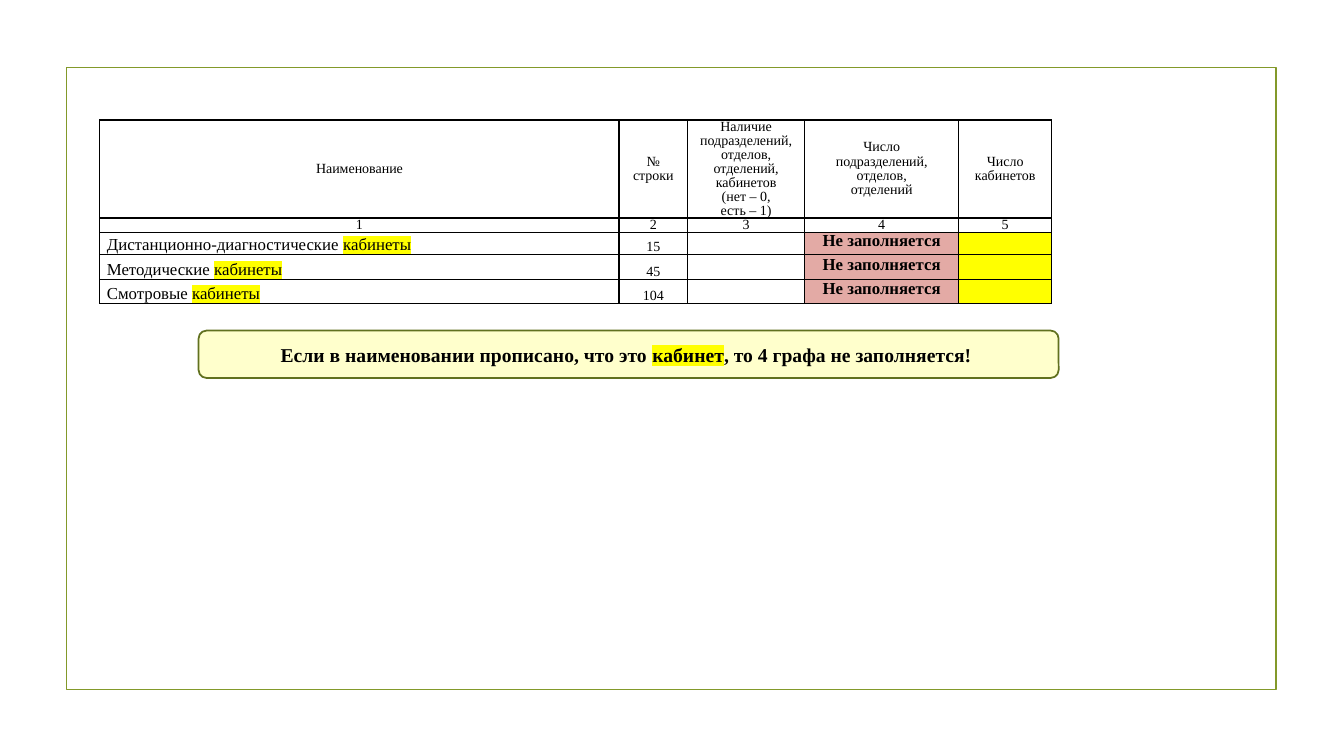
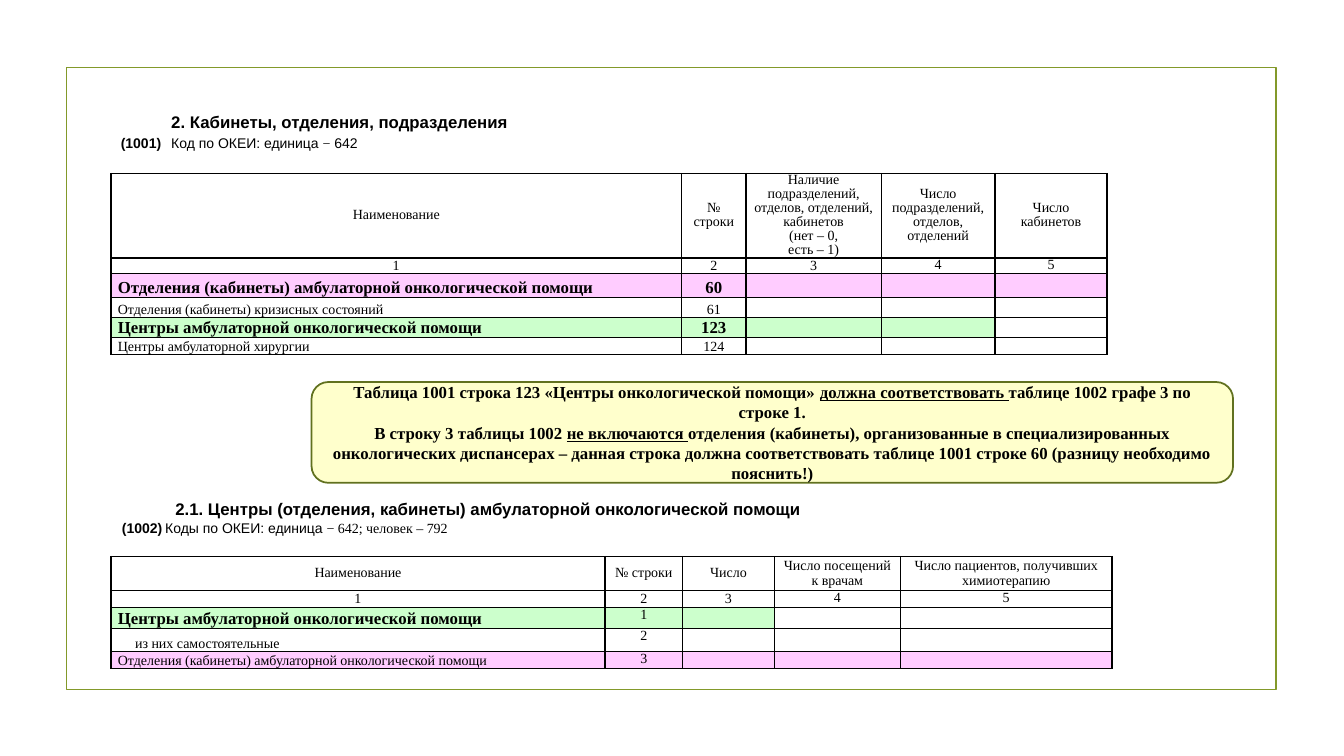
from dataclasses import dataclass

from lxml.etree import SubElement
from pptx import Presentation
from pptx.dml.color import RGBColor
from pptx.enum.shapes import MSO_SHAPE
from pptx.enum.text import MSO_ANCHOR, PP_ALIGN
from pptx.oxml.ns import qn
from pptx.util import Inches, Pt


@dataclass(frozen=True)
class Theme:
    black: str = "000000"
    frame: str = "83992A"
    callout_fill: str = "FFFFCC"
    callout_line: str = "61711F"
    yellow: str = "FFFF00"
    red: str = "E3AAA5"
    green: str = "CCFFCC"
    pink: str = "FFCCFF"
    serif: str = "Times New Roman"
    sans: str = "Arial"
    small: int = 10
    large: int = 12
    callout: int = 14
    outline: float = 1.25
    border: int = 1


THEME = Theme()
# Text styles: size and bold
PLAIN = (THEME.small, False)
LARGE = (THEME.large, False)
STRONG = (THEME.large, True)
CALLOUT = (THEME.callout, True)


def write(paragraph, text, style, align=PP_ALIGN.LEFT, face=THEME.serif, mark=None):
    """Write text whose |marked| pieces are highlighted, underlined or serif."""
    paragraph.alignment = align
    paragraph.font.name = face
    paragraph.font.size, paragraph.font.bold = Pt(style[0]), style[1]
    paragraph.font.color.rgb = RGBColor.from_string(THEME.black)
    for line_number, line in enumerate(text.split("\n")):
        if line_number:
            paragraph.add_line_break()
        for piece_number, piece in enumerate(line.split("|")):
            if not piece:
                continue
            run = paragraph.add_run()
            run.text = piece
            if piece_number % 2 == 0:
                continue
            if mark == "highlight":
                highlight = SubElement(run.font._element, qn("a:highlight"))
                SubElement(highlight, qn("a:srgbClr"), val=THEME.yellow)
            elif mark == "underline":
                run.font.underline = True
            elif mark == "serif":
                run.font.name = THEME.serif


presentation = Presentation()
presentation.slide_width, presentation.slide_height = Inches(13.33), Inches(7.5)
blank = presentation.slide_layouts[6]
offices, oncology = [presentation.slides.add_slide(blank) for _ in range(2)]

# The frame is shared through the layout
frame = offices.shapes.add_shape(
    MSO_SHAPE.RECTANGLE, Inches(0.66), Inches(0.67), Inches(12), Inches(6.17))
frame.shadow.inherit = False
frame.fill.background()
frame.line.color.rgb = RGBColor.from_string(THEME.frame)
frame.line.width = Pt(THEME.outline)
blank.shapes._spTree.append(frame._element)

# Section headings: title, its indent, code, its indent, tab position, units
headings = [
    (1.1, 1.06, 9.88, 0.56, "2. Кабинеты, отделения, подразделения", 0.5,
     "(1001)", 0, 4.64, "Код по ОКЕИ: единица |−| 642", 2),
    (1.04, 4.9, 9.92, 0.6,
     "2.1. Центры (отделения, кабинеты) амбулаторной онкологической помощи", 0.6,
     "(1002)", 0.07, 6.97, "Коды по ОКЕИ: единица |− 642; человек – 792|", 0),
]
for (left, top, width, height, title, title_indent,
     code, code_indent, tab, units, gap) in headings:
    heading = oncology.shapes.add_textbox(
        Inches(left), Inches(top), Inches(width), Inches(height)).text_frame
    heading.word_wrap = True
    title_line = heading.paragraphs[0]
    title_line._p.get_or_add_pPr().set("marL", str(Inches(title_indent)))
    write(title_line, title, STRONG, face=THEME.sans)
    code_line = heading.add_paragraph()
    properties = code_line._p.get_or_add_pPr()
    properties.set("marL", "0")
    properties.set("indent", str(Inches(code_indent)))
    tabs = SubElement(properties, qn("a:tabLst"))
    SubElement(tabs, qn("a:tab"), pos=str(Inches(tab)), algn="l")
    code_line.space_before = Pt(gap)
    write(code_line, f"{code}\t{units}", PLAIN, face=THEME.sans, mark="serif")
    code_line.runs[0].text = code
    code_line.runs[0].font.bold = True
    unit_start = code_line.add_run()
    unit_start.text = "\t" + units.split("|")[0]
    code_line.runs[0]._r.addnext(unit_start._r)

# Tables: rows hold a height, five fills and the (text, style) of leading cells
full_header = [
    "Наименование", "№\nстроки",
    "Наличие подразделений,\nотделов, отделений, кабинетов\n(нет – 0,\nесть – 1)",
    "Число\nподразделений,\nотделов,\nотделений", "Число кабинетов"]
short_header = [
    "Наименование", "№ строки", "Число", "Число посещений\nк врачам",
    "Число пациентов, получивших химиотерапию"]
centers = "Центры амбулаторной онкологической помощи"
departments = "Отделения (кабинеты) амбулаторной онкологической помощи"
no_fill = [None] * 5
all_pink = [THEME.pink] * 5
not_filled = [None, None, None, THEME.red, THEME.yellow]
TOP, MIDDLE, BOTTOM = MSO_ANCHOR.TOP, MSO_ANCHOR.MIDDLE, MSO_ANCHOR.BOTTOM

office_rows = [
    (height, not_filled, [(f"{name} |кабинеты|", LARGE), (number, PLAIN),
                          ("", PLAIN), ("Не заполняется", STRONG)])
    for height, name, number in [
        (0.22, "Дистанционно-диагностические", "15"),
        (0.25, "Методические", "45"),
        (0.24, "Смотровые", "104")]]
rows_1001 = [
    (0.24, all_pink, [(departments, STRONG), ("60", STRONG)]),
    (0.2, no_fill, [("Отделения (кабинеты) кризисных состояний", PLAIN), ("61", PLAIN)]),
    (0.2, [THEME.green] * 4 + [None], [(centers, STRONG), ("123", STRONG)]),
    (0.17, no_fill, [("Центры амбулаторной хирургии", PLAIN), ("124", PLAIN)]),
]
rows_1002 = [
    (0.21, [THEME.green] * 3 + [None] * 2, [(centers, STRONG), ("1", PLAIN)]),
    (0.23, no_fill, [("из них самостоятельные", PLAIN), ("2", PLAIN)]),
    (0.17, all_pink, [(departments, PLAIN), ("3", PLAIN)]),
]
# Exact rows: how many rows from the top have 10 pt line spacing
tables = [
    (offices, 0.99, 1.19, [5.15, 0.68, 1.16, 1.53, 0.92], full_header,
     (0.97, 0.14), office_rows, 5, BOTTOM, BOTTOM),
    (oncology, 1.1, 1.72, [5.66, 0.64, 1.34, 1.13, 1.11], full_header,
     (0.84, 0.15), rows_1001, 2, BOTTOM, BOTTOM),
    (oncology, 1.1, 5.52, [4.9, 0.77, 0.91, 1.25, 2.1], short_header,
     (0.33, 0.17), rows_1002, 0, MIDDLE, TOP),
]
for (slide, left, top, widths, header, header_heights, body,
     exact_rows, index_anchor, number_anchor) in tables:
    rows = [
        (header_heights[0], no_fill, [(text, PLAIN) for text in header]),
        (header_heights[1], no_fill, [(text, PLAIN) for text in "12345"]),
        *body]
    heights = [row[0] for row in rows]
    table = slide.shapes.add_table(
        len(rows), len(widths), Inches(left), Inches(top),
        Inches(sum(widths)), Inches(sum(heights))).table
    table.first_row = table.horz_banding = False
    for column, width in zip(table.columns, widths):
        column.width = Inches(width)
    index_anchors = [index_anchor] * 3 + [TOP] * 2
    body_anchors = [BOTTOM, number_anchor, MIDDLE, MIDDLE, MIDDLE]
    anchors = [[MIDDLE] * 5, index_anchors] + [body_anchors] * len(body)
    for row_number, (height, fills, entries) in enumerate(rows):
        table.rows[row_number].height = Inches(height)
        for column_number, fill in enumerate(fills):
            cell = table.cell(row_number, column_number)
            cell.margin_left = cell.margin_right = Inches(0.07)
            cell.margin_top = cell.margin_bottom = 0
            cell.vertical_anchor = anchors[row_number][column_number]
            for side in ("a:lnL", "a:lnR", "a:lnT", "a:lnB"):
                border = SubElement(
                    cell._tc.get_or_add_tcPr(), qn(side), w=str(Pt(THEME.border)))
                ink = SubElement(border, qn("a:solidFill"))
                SubElement(ink, qn("a:srgbClr"), val=THEME.black)
            if fill:
                cell.fill.solid()
                cell.fill.fore_color.rgb = RGBColor.from_string(fill)
            else:
                cell.fill.background()
            paragraph = cell.text_frame.paragraphs[0]
            if row_number < exact_rows:
                paragraph.line_spacing = Pt(10)
            text, style = entries[column_number] if column_number < len(entries) else ("", PLAIN)
            is_label = row_number > 1 and column_number == 0
            write(paragraph, text, style,
                  PP_ALIGN.LEFT if is_label else PP_ALIGN.CENTER, mark="highlight")
            if not text:
                SubElement(paragraph._p, qn("a:endParaRPr"), sz=str(THEME.small * 100))
            if text.startswith("из них"):
                paragraph._p.get_or_add_pPr().set("marL", str(Inches(0.17)))

# Rules to remember
callouts = [
    (offices, 1.97, 3.28, 8.53, 0.47, CALLOUT, "highlight",
     ["Если в наименовании прописано, что это |кабинет|, то 4 графа не заполняется! "]),
    (oncology, 3.09, 3.79, 9.14, 1, STRONG, "underline",
     ["Таблица 1001 строка 123 «Центры онкологической помощи» "
      "|должна соответствовать |таблице 1002 графе 3 по строке 1.",
      "В строку 3 таблицы 1002 |не включаются |отделения (кабинеты), организованные "
      "в специализированных онкологических диспансерах – данная строка должна "
      "соответствовать таблице 1001 строке 60 (разницу необходимо пояснить!)"]),
]
for slide, left, top, width, height, style, mark, statements in callouts:
    callout = slide.shapes.add_shape(
        MSO_SHAPE.ROUNDED_RECTANGLE, Inches(left), Inches(top), Inches(width), Inches(height))
    callout.shadow.inherit = False
    callout.fill.solid()
    callout.fill.fore_color.rgb = RGBColor.from_string(THEME.callout_fill)
    callout.line.color.rgb = RGBColor.from_string(THEME.callout_line)
    callout.line.width = Pt(THEME.outline)
    callout.text_frame.word_wrap = True
    callout.text_frame.vertical_anchor = MIDDLE
    for number, statement in enumerate(statements):
        paragraph = (callout.text_frame.add_paragraph() if number
                     else callout.text_frame.paragraphs[0])
        write(paragraph, statement, style, PP_ALIGN.CENTER, mark=mark)

presentation.save("out.pptx")
